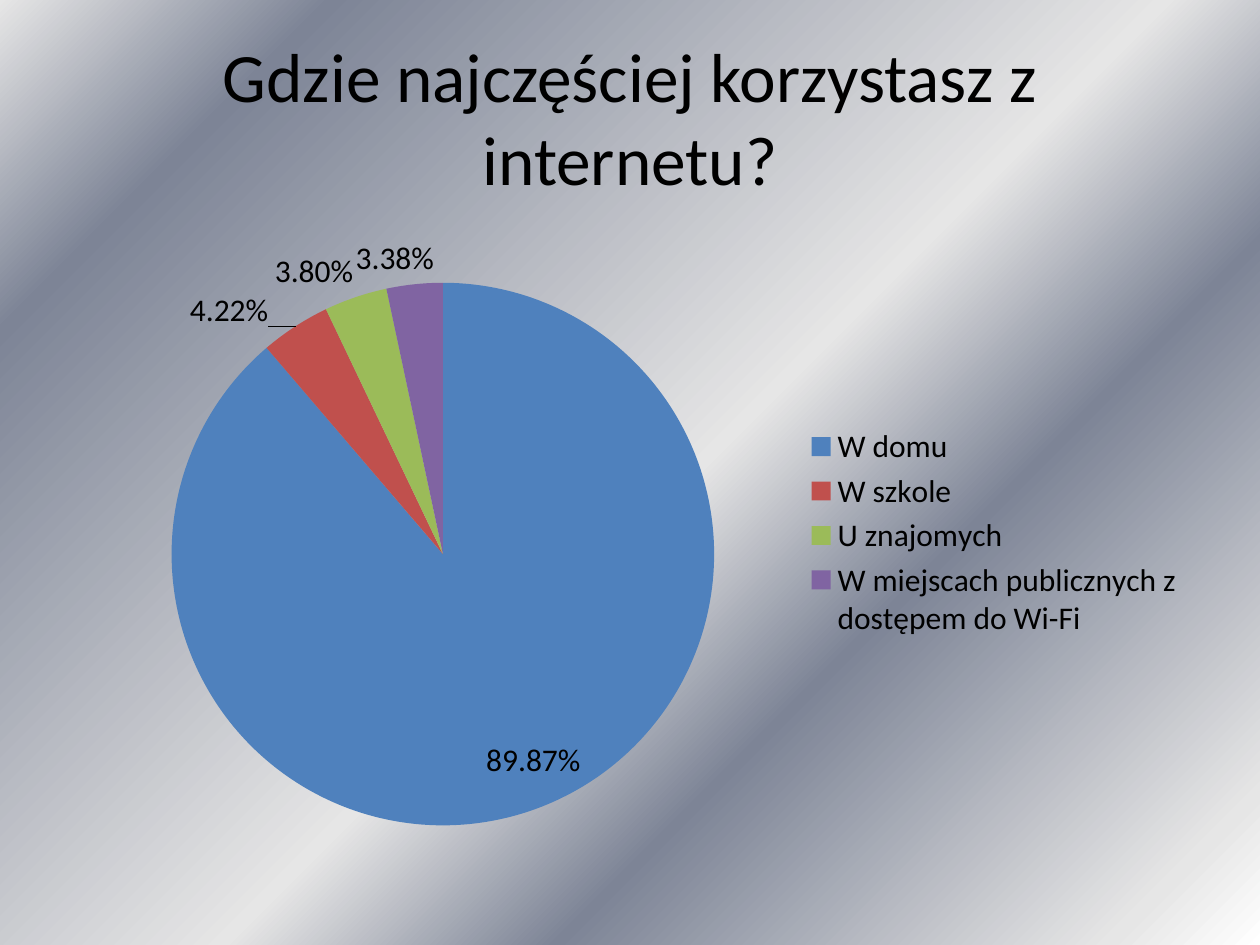
from dataclasses import dataclass

from lxml.etree import SubElement
from pptx import Presentation
from pptx.chart.data import CategoryChartData
from pptx.dml.color import RGBColor
from pptx.enum.chart import XL_CHART_TYPE, XL_LABEL_POSITION, XL_LEGEND_POSITION
from pptx.enum.text import MSO_ANCHOR, MSO_AUTO_SIZE, PP_ALIGN
from pptx.oxml import parse_xml
from pptx.oxml.ns import nsdecls, qn
from pptx.util import Inches, Pt


@dataclass(frozen=True)
class Theme:
    font: str = "Calibri"
    text: str = "000000"
    title_size: float = 39.6
    chart_size: float = 18
    gradient_angle: int = 225
    gradient: tuple = (
        (0, "FFFFFF"), (7, "E6E6E6"), (32, "7D8496"),
        (47, "E6E6E6"), (85, "7D8496"), (100, "E6E6E6"),
    )


@dataclass(frozen=True)
class Answer:
    label: str
    share: float
    color: str


THEME = Theme()
PERCENT = "0.00%"
ANSWERS = (
    Answer("W domu", 0.8987, "4F81BD"),
    Answer("W szkole", 0.0422, "C0504D"),
    Answer("U znajomych", 0.038, "9BBB59"),
    Answer("W miejscach publicznych z dostępem do Wi-Fi", 0.0338, "8064A2"),
)
SCHOOL = 1


def style_font(font, size: float) -> None:
    font.name = THEME.font
    font.size = Pt(size)
    font.color.rgb = RGBColor.from_string(THEME.text)


def paint_background(page) -> None:
    """Fill the slide with the theme's metallic gradient of several stops."""
    page.background.fill.gradient()
    gradient = page.element.find(".//" + qn("a:gradFill"))
    stops = gradient.find(qn("a:gsLst"))
    for stop in list(stops):
        stops.remove(stop)
    for position, color in THEME.gradient:
        stop = SubElement(stops, qn("a:gs"), pos=str(position * 1000))
        SubElement(stop, qn("a:srgbClr"), val=color)
    direction = gradient.find(qn("a:lin"))
    direction.set("ang", str(THEME.gradient_angle * 60000))
    direction.set("scaled", "0")


def add_title(page, text: str) -> None:
    title = page.shapes.title
    title.left, title.top = Inches(0.5), Inches(0.3)
    title.width, title.height = Inches(9), Inches(1.25)
    frame = title.text_frame
    frame.text = text
    frame.word_wrap = True
    frame.auto_size = MSO_AUTO_SIZE.NONE
    frame.vertical_anchor = MSO_ANCHOR.MIDDLE
    paragraph = frame.paragraphs[0]
    paragraph.alignment = PP_ALIGN.CENTER
    style_font(paragraph.runs[0].font, THEME.title_size)


def manual_layout(**settings):
    """Build a c:layout element from its settings, in schema order."""
    items = "".join(f'<c:{name} val="{value}"/>' for name, value in settings.items())
    return parse_xml(
        f'<c:layout {nsdecls("c")}><c:manualLayout>{items}</c:manualLayout></c:layout>'
    )


def place_plot(chart) -> None:
    plot_area = chart._chartSpace.find(".//" + qn("c:plotArea"))
    for layout in plot_area.findall(qn("c:layout")):
        plot_area.remove(layout)
    plot_area.insert(0, manual_layout(
        layoutTarget="inner", xMode="edge", yMode="edge",
        x=0.095, y=0.1, w=0.48, h=0.87,
    ))


def label_slices(series) -> None:
    labels = series.data_labels
    labels.show_value = True
    labels.show_percentage = False
    labels.number_format = PERCENT
    labels.number_format_is_linked = False
    labels.position = XL_LABEL_POSITION.BEST_FIT
    style_font(labels.font, THEME.chart_size)

    # The school label stands off from its slice, joined by a leader line.
    school_label = series.points[SCHOOL].data_label
    style_font(school_label.font, THEME.chart_size)
    school_label.position = XL_LABEL_POSITION.BEST_FIT
    index = series._element.find(".//" + qn("c:dLbl") + "/" + qn("c:idx"))
    layout = manual_layout(x=-0.02, y=0.015)
    index.addnext(layout)
    layout.addnext(parse_xml(
        f'<c:numFmt {nsdecls("c")} formatCode="{PERCENT}" sourceLinked="0"/>'
    ))


def add_pie(page, answers: tuple[Answer, ...]) -> None:
    data = CategoryChartData(number_format=PERCENT)
    data.categories = [answer.label for answer in answers]
    data.add_series("Series 1", [answer.share for answer in answers])
    chart = page.shapes.add_chart(
        XL_CHART_TYPE.PIE, Inches(0.5), Inches(1.75), Inches(9), Inches(4.95), data
    ).chart
    chart.has_title = False
    style_font(chart.font, THEME.chart_size)
    chart.has_legend = True
    chart.legend.position = XL_LEGEND_POSITION.RIGHT
    chart.legend.include_in_layout = False
    place_plot(chart)
    chart.plots[0].vary_by_categories = True
    series = chart.plots[0].series[0]
    for index, answer in enumerate(answers):
        fill = series.points[index].format.fill
        fill.solid()
        fill.fore_color.rgb = RGBColor.from_string(answer.color)
    label_slices(series)


def main() -> None:
    deck = Presentation()
    deck.slide_width, deck.slide_height = Inches(10), Inches(7.5)
    page = deck.slides.add_slide(deck.slide_layouts.get_by_name("Title Only"))
    paint_background(page)
    add_title(page, "Gdzie najczęściej korzystasz z internetu?")
    add_pie(page, ANSWERS)
    deck.save("out.pptx")


if __name__ == "__main__":
    main()
